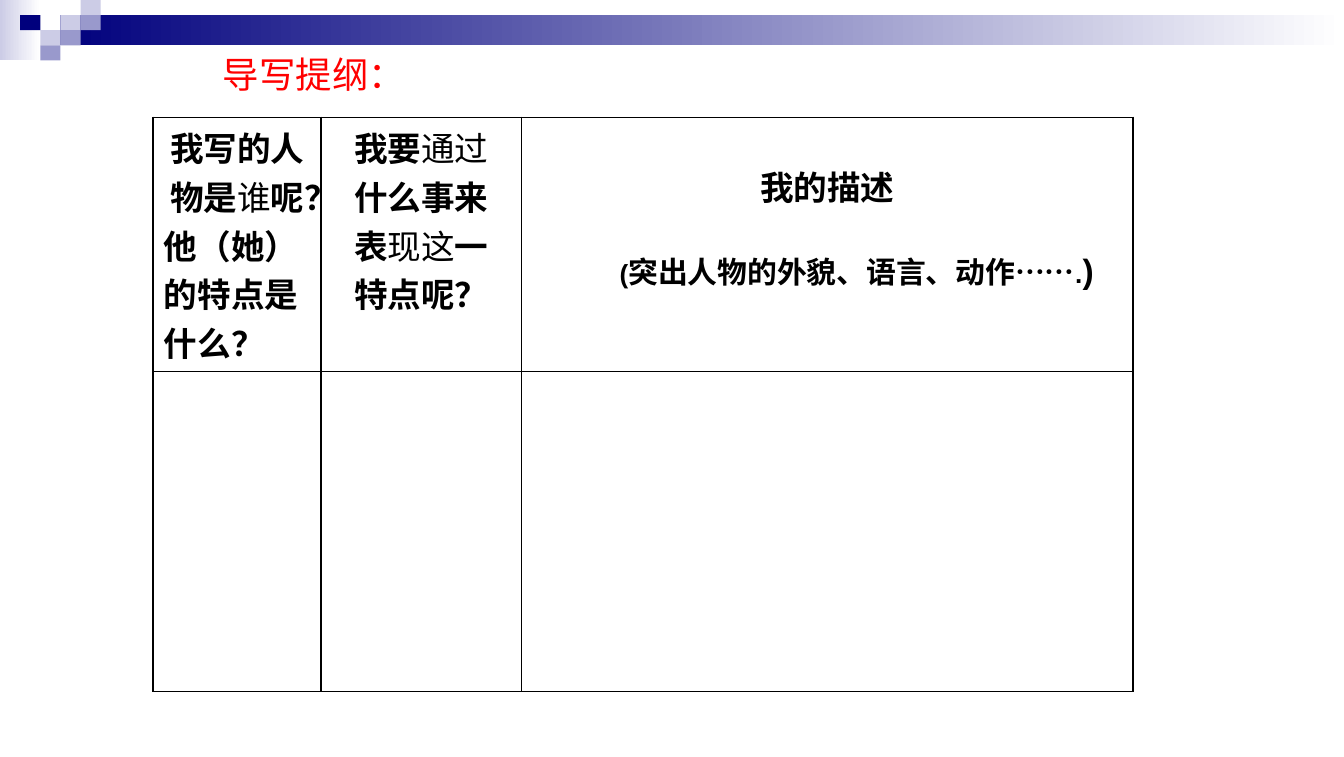
from dataclasses import dataclass
from typing import NamedTuple

from lxml.etree import SubElement
from pptx import Presentation
from pptx.dml.color import RGBColor as Rgb
from pptx.enum.shapes import MSO_SHAPE as Shape
from pptx.enum.text import MSO_AUTO_SIZE as AutoSize, PP_ALIGN as Align
from pptx.oxml.ns import qn
from pptx.util import Inches, Pt

WIDTH, HEIGHT = Inches(10), Inches(5.63)
TILE_W, TILE_H = WIDTH * 0.015, HEIGHT * 0.02


@dataclass(frozen=True)
class Theme:
    navy: str = "00007D"
    mid: str = "9999CC"
    light: str = "CCCCE6"
    white: str = "FFFFFF"
    black: str = "000000"
    red: str = "FF0000"
    font: str = "Arial"
    title: float = 19.5
    body: float = 18
    note: float = 16
    small: float = 14
    rule: float = 1


THEME = Theme()


class Tile(NamedTuple):
    """A block of the header pattern, in tile columns and rows; two colours make a gradient."""
    col: float
    row: float
    colours: tuple[str, ...]
    cols: float = 1
    rows: float = 1


class Words(NamedTuple):
    text: str
    bold: bool = True
    size: float = THEME.body


class Line(NamedTuple):
    words: tuple[Words, ...]
    align: Align | None = Align.CENTER
    before: float = 0
    margin: float = 0.38
    indent: float = -0.38


class Heading(NamedTuple):
    width: float
    lines: tuple[Line, ...]
    top: float = 0.04


FULL_COLS = WIDTH / TILE_W
TILES = (
    Tile(0, 0, (THEME.light, THEME.white), 2, 4),
    Tile(3, 1, (THEME.navy, THEME.white), FULL_COLS - 3, 2),
    Tile(3, 1, (THEME.light,)),
    Tile(4, 0, (THEME.light,)),
    Tile(4, 1, (THEME.mid,)),
    Tile(2, 2, (THEME.light,)),
    Tile(1, 1, (THEME.navy,)),
    Tile(3, 2, (THEME.mid,)),
    Tile(2, 3, (THEME.mid,)),
)

HEADINGS = (
    Heading(0.125, (
        Line((Words("我写的人"),)),
        Line((Words("物是"), Words("谁", False), Words("呢？"))),
        Line((Words("他（她）"),), None),
        Line((Words("的特点是"),), None),
        Line((Words("什么？"),), None),
    )),
    Heading(0.149, (
        Line((Words("我要"), Words("通过", False))),
        Line((Words("什么事来"),)),
        Line((Words("表"), Words("现这", False), Words("一"))),
        Line((Words("特点呢？"),)),
    )),
    Heading(0.455, (
        Line((Words("我的描述"),)),
        Line((Words("(", size=THEME.small),
              Words("突出人物的外貌、语言、动作……", size=THEME.note),
              Words(".", size=THEME.small), Words(")")),
             None, before=20.7, margin=0.65, indent=0),
    ), top=0.33),
)
ROW_SHARES = (0.281, 0.423)


def apply(target, formats: dict) -> None:
    for name, value in formats.items():
        setattr(target, name, value)


def style_font(font, size: float, bold: bool, colour: str) -> None:
    apply(font, {"name": THEME.font, "size": Pt(size), "bold": bold})
    font.color.rgb = Rgb.from_string(colour)


def draw_tile(slide, tile: Tile) -> None:
    block = slide.shapes.add_shape(
        Shape.RECTANGLE, round(tile.col * TILE_W), round(tile.row * TILE_H),
        round(tile.cols * TILE_W), round(tile.rows * TILE_H))
    block.shadow.inherit = False
    block.line.fill.background()
    if len(tile.colours) == 1:
        block.fill.solid()
        block.fill.fore_color.rgb = Rgb.from_string(tile.colours[0])
        return
    block.fill.gradient()
    block.fill.gradient_angle = 0
    for stop, colour in zip(block.fill.gradient_stops, tile.colours):
        stop.color.rgb = Rgb.from_string(colour)


def draw_title(slide, text: str) -> None:
    box = slide.shapes.add_textbox(round(WIDTH * 0.156), round(HEIGHT * 0.06),
                                   round(WIDTH * 0.268), round(HEIGHT * 0.076))
    apply(box.text_frame, {"word_wrap": True, "auto_size": AutoSize.SHAPE_TO_FIT_TEXT})
    title = box.text_frame.paragraphs[0].add_run()
    title.text = text
    style_font(title.font, THEME.title, False, THEME.red)


def format_cell(cell, top: float = 0.04) -> None:
    """Give the cell its margins, black borders and no fill."""
    apply(cell, {"margin_left": Inches(0.08), "margin_right": Inches(0.08),
                 "margin_top": Inches(top), "margin_bottom": Inches(0.04)})
    properties = cell._tc.get_or_add_tcPr()
    for side in ("a:lnL", "a:lnR", "a:lnT", "a:lnB"):
        border = SubElement(properties, qn(side), w=str(Pt(THEME.rule)))
        SubElement(SubElement(border, qn("a:solidFill")), qn("a:srgbClr"), val=THEME.black)
    cell.fill.background()


def write_line(paragraph, line: Line) -> None:
    apply(paragraph, {"alignment": line.align})
    if line.before:
        paragraph.space_before = Pt(line.before)
    properties = paragraph._p.get_or_add_pPr()
    properties.set("marL", str(Inches(line.margin)))
    properties.set("indent", str(Inches(line.indent)))
    for words in line.words:
        run = paragraph.add_run()
        run.text = words.text
        style_font(run.font, words.size, words.bold, THEME.black)


def draw_outline(slide) -> None:
    table = slide.shapes.add_table(
        len(ROW_SHARES), len(HEADINGS), round(WIDTH * 0.114), round(HEIGHT * 0.155),
        round(WIDTH * sum(heading.width for heading in HEADINGS)),
        round(HEIGHT * sum(ROW_SHARES))).table
    apply(table, {"first_row": False, "horz_banding": False})
    for row, share in zip(table.rows, ROW_SHARES):
        row.height = round(HEIGHT * share)
    for index, heading in enumerate(HEADINGS):
        table.columns[index].width = round(WIDTH * heading.width)
        question, answer = table.cell(0, index), table.cell(1, index)
        format_cell(question, heading.top)
        format_cell(answer)
        for number, line in enumerate(heading.lines):
            frame = question.text_frame
            write_line(frame.add_paragraph() if number else frame.paragraphs[0], line)


def main() -> None:
    deck = Presentation()
    apply(deck, {"slide_width": WIDTH, "slide_height": HEIGHT})
    slide = deck.slides.add_slide(deck.slide_layouts[6])
    for tile in TILES:
        draw_tile(slide, tile)
    draw_outline(slide)
    draw_title(slide, "导写提纲：")
    deck.save("out.pptx")


if __name__ == "__main__":
    main()
